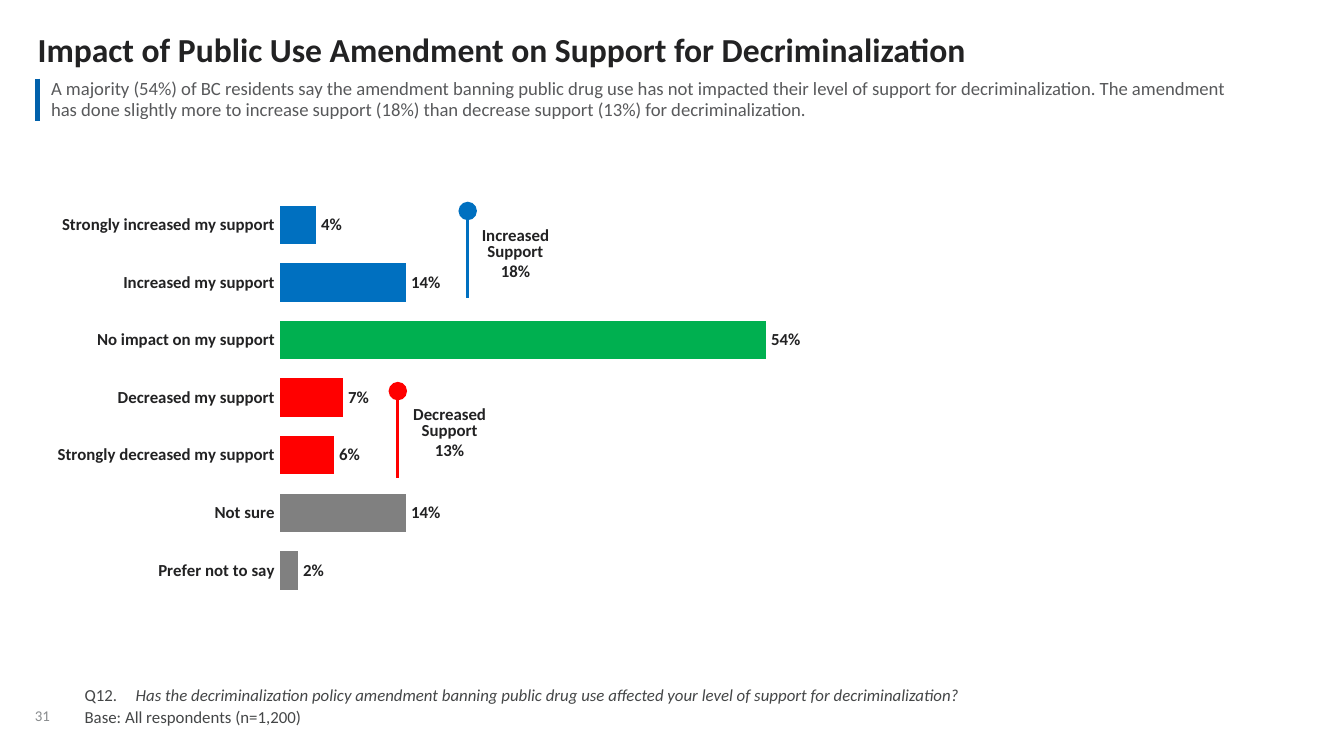
from dataclasses import dataclass

from lxml import etree
from pptx import Presentation
from pptx import util as u
from pptx.chart import data as cd
from pptx.dml import color as dml
from pptx.enum import chart as ch
from pptx.enum import shapes, text
from pptx.oxml import ns

FONT = "Calibri"
DARK, BLUE, GREEN, RED, GREY = "222223", "0070C0", "00B050", "FF0000", "808080"
Inches = u.Inches


@dataclass(frozen=True)
class Box:
    left: float
    top: float
    width: float
    height: float

    def emu(self) -> tuple:
        return tuple(Inches(v) for v in (self.left, self.top, self.width, self.height))


@dataclass(frozen=True)
class Answer:
    label: str
    share: float
    color: str


@dataclass(frozen=True)
class Summary:
    word: str
    total: str
    color: str
    line_x: float
    line_top: float
    box: Box


ANSWERS = [
    Answer("Strongly increased my support", 0.04, BLUE),
    Answer("Increased my support", 0.14, BLUE),
    Answer("No impact on my support", 0.54, GREEN),
    Answer("Decreased my support", 0.07, RED),
    Answer("Strongly decreased my support", 0.06, RED),
    Answer("Not sure", 0.14, GREY),
    Answer("Prefer not to say", 0.02, GREY),
]
SUMMARIES = [
    Summary("Increased", "18%", BLUE, 3.48, 1.57, Box(3.56, 1.68, 0.55, 0.43)),
    Summary("Decreased", "13%", RED, 2.96, 2.91, Box(3.05, 3.01, 0.59, 0.43)),
]
SUMMARY_LINE = 0.65


def rgb(value: str) -> dml.RGBColor:
    return dml.RGBColor.from_string(value)


def set_font(font, size: float, color: str, bold: bool = False, italic: bool = False) -> None:
    font.name, font.size = FONT, u.Pt(size)
    font.bold, font.italic = bold, italic
    font.color.rgb = rgb(color)


def add_run(p, content: str, **fmt) -> None:
    r = p.add_run()
    r.text = content
    set_font(r.font, **fmt)


def write(p, content: str, align=text.PP_ALIGN.LEFT, spacing: float = 0.9,
          after: float = 0, **fmt) -> None:
    p.alignment, p.line_spacing = align, spacing
    p.space_before, p.space_after = u.Pt(0), u.Pt(after)
    add_run(p, content, **fmt)


def set_frame(tf, inset: float = 0, anchor=text.MSO_ANCHOR.TOP, wrap: bool = True) -> None:
    tf.margin_left = tf.margin_right = tf.margin_top = tf.margin_bottom = Inches(inset)
    tf.vertical_anchor, tf.word_wrap = anchor, wrap


def add_box(s, box: Box, **frame):
    tf = s.shapes.add_textbox(*box.emu()).text_frame
    set_frame(tf, **frame)
    return tf


def add_title(s, content: str) -> None:
    sp = s.shapes.title
    sp.left, sp.top, sp.width, sp.height = Box(0.28, 0.25, 9.46, 0.27).emu()
    tf = sp.text_frame
    set_frame(tf, anchor=text.MSO_ANCHOR.MIDDLE)
    tf.auto_size = text.MSO_AUTO_SIZE.NONE
    write(tf.paragraphs[0], content, size=18, color=DARK, bold=True)


def cell_border(side: str, color: str, width: float):
    ln = etree.Element(ns.qn(f"a:ln{side}"), w=str(u.Pt(width)))
    fill = etree.SubElement(ln, ns.qn("a:solidFill"))
    etree.SubElement(fill, ns.qn("a:srgbClr"), val=color)
    return ln


def add_finding(s, content: str) -> None:
    frame = s.shapes.add_table(1, 1, *Box(0.28, 0.59, 9, 0.3).emu())
    table = frame.table
    table.rows[0].height = Inches(0.2)
    frame.height = Inches(0.3)
    table.first_row = table.horz_banding = False
    cell = table.cell(0, 0)
    cell.margin_left = cell.margin_right = Inches(0.1)
    cell.margin_top = cell.margin_bottom = 0
    cell.vertical_anchor = text.MSO_ANCHOR.MIDDLE
    cell.fill.background()
    tcPr = cell._tc.get_or_add_tcPr()
    tcPr.insert(0, cell_border("L", "0161AB", 3))
    tcPr.insert(1, cell_border("R", "FFFFFF", 1))
    write(cell.text_frame.paragraphs[0], content, after=3, size=10, color="58595B")


def set_plot_area(chart, x: float, y: float, w: float, h: float) -> None:
    area = chart._chartSpace.chart.plotArea
    for old in area.findall(ns.qn("c:layout")):
        area.remove(old)
    layout = etree.Element(ns.qn("c:layout"))
    manual = etree.SubElement(layout, ns.qn("c:manualLayout"))
    values = {"layoutTarget": "inner", "xMode": "edge", "yMode": "edge",
              "x": x, "y": y, "w": w, "h": h}
    for name, value in values.items():
        etree.SubElement(manual, ns.qn(f"c:{name}"), val=str(value))
    area.insert(0, layout)


def add_answers(s, answers: list[Answer]) -> None:
    data = cd.CategoryChartData(number_format="0%")
    data.categories = [a.label for a in answers]
    data.add_series("Series 1", [a.share for a in answers])
    chart = s.shapes.add_chart(ch.XL_CHART_TYPE.BAR_CLUSTERED,
                               *Box(0.28, 1.46, 8.5, 3).emu(), data).chart
    chart.has_legend = chart.has_title = False
    set_font(chart.font, 9, DARK, bold=True)
    for axis in (chart.category_axis, chart.value_axis):
        axis.has_major_gridlines = False
        axis.major_tick_mark = axis.minor_tick_mark = ch.XL_TICK_MARK.NONE
        axis.format.line.fill.background()
    chart.category_axis.reverse_order = True
    values = chart.value_axis
    values.tick_label_position = ch.XL_TICK_LABEL_POSITION.NONE
    values.minimum_scale, values.maximum_scale, values.major_unit = 0, 1, 0.2
    plot = chart.plots[0]
    plot.gap_width, plot.vary_by_categories = 50, False
    plot.has_data_labels = True
    labels = plot.data_labels
    labels.show_value = True
    labels.number_format, labels.number_format_is_linked = "0%", False
    labels.position = ch.XL_LABEL_POSITION.OUTSIDE_END
    set_font(labels.font, 9, DARK, bold=True)
    for i, a in enumerate(answers):
        fill = plot.series[0].points[i].format.fill
        fill.solid()
        fill.fore_color.rgb = rgb(a.color)
    set_plot_area(chart, 0.212, 0, 0.788, 1)


def add_summary(s, item: Summary) -> None:
    x = Inches(item.line_x)
    line = s.shapes.add_connector(shapes.MSO_CONNECTOR.STRAIGHT, x, Inches(item.line_top),
                                  x, Inches(item.line_top + SUMMARY_LINE))
    line.line.color.rgb, line.line.width = rgb(item.color), u.Pt(1.5)
    etree.SubElement(line.line._get_or_add_ln(), ns.qn("a:headEnd"),
                     type="oval", w="lg", len="lg")
    etree.SubElement(line._element.spPr, ns.qn("a:effectLst"))
    tf = add_box(s, item.box, inset=0.02, wrap=False)
    for i, (word, spacing) in enumerate([(item.word, 0.8), ("Support", 0.8), (item.total, 1.0)]):
        p = tf.add_paragraph() if i else tf.paragraphs[0]
        write(p, word, align=text.PP_ALIGN.CENTER, spacing=spacing,
              size=9, color=DARK, bold=True)


def add_question(s, number: str, question: str, base: str) -> None:
    tf = add_box(s, Box(0.63, 5.1, 8.4, 0.31), anchor=text.MSO_ANCHOR.BOTTOM)
    fmt = dict(size=9, color="444647")
    first, second = tf.paragraphs[0], tf.add_paragraph()
    for p, content in ((first, f"{number}\t"), (second, base)):
        pPr = p._p.get_or_add_pPr()
        pPr.set("marL", str(Inches(0.38)))
        pPr.set("indent", str(-Inches(0.38)))
        write(p, content, after=2, **fmt)
    add_run(first, question, italic=True, **fmt)


def main() -> None:
    prs = Presentation()
    prs.slide_width = Inches(10)
    prs.slide_height = prs.slide_width * 9 // 16
    s = prs.slides.add_slide(prs.slide_layouts[5])
    add_title(s, "Impact of Public Use Amendment on Support for Decriminalization")
    add_finding(s, "A majority (54%) of BC residents say the amendment banning public drug use "
                   "has not impacted their level of support for decriminalization. The amendment "
                   "has done slightly more to increase support (18%) than decrease support (13%) "
                   "for decriminalization.")
    add_answers(s, ANSWERS)
    for item in SUMMARIES:
        add_summary(s, item)
    add_question(s, "Q12.", "Has the decriminalization policy amendment banning public drug use "
                            "affected your level of support for decriminalization?",
                 "Base: All respondents (n=1,200)")
    tf = add_box(s, Box(0.26, 5.13, 0.34, 0.26), anchor=text.MSO_ANCHOR.BOTTOM, wrap=False)
    write(tf.paragraphs[0], "31", spacing=0.85, size=8, color="888B8D")
    prs.save("out.pptx")


if __name__ == "__main__":
    main()
